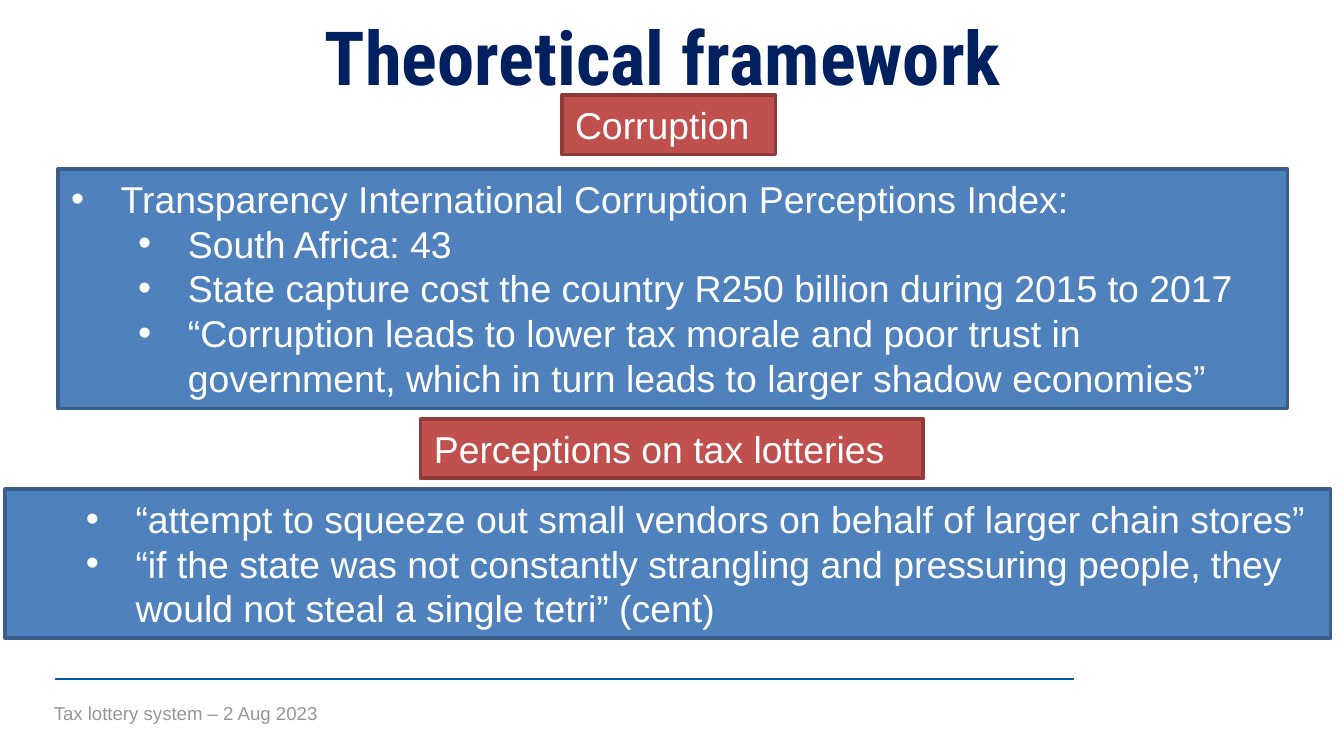
from lxml import etree
from pptx import Presentation
from pptx.dml.color import RGBColor
from pptx.enum.shapes import MSO_CONNECTOR, MSO_SHAPE
from pptx.enum.text import MSO_ANCHOR, MSO_AUTO_SIZE, PP_ALIGN
from pptx.oxml.ns import qn
from pptx.util import Inches, Pt

NAVY = RGBColor(0x00, 0x20, 0x60)
WHITE = RGBColor(0xFF, 0xFF, 0xFF)
GREY = RGBColor(0x96, 0x96, 0x96)
RULE_BLUE = RGBColor(0x00, 0x5B, 0xAA)
BLUE = RGBColor(0x4F, 0x81, 0xBD)
BLUE_EDGE = RGBColor(0x3A, 0x5F, 0x8C)
RED = RGBColor(0xC0, 0x50, 0x4D)
RED_EDGE = RGBColor(0x8E, 0x3B, 0x39)


def place(shape, left, top, width, height):
    shape.left, shape.top = Inches(left), Inches(top)
    shape.width, shape.height = Inches(width), Inches(height)
    frame = shape.text_frame
    frame.word_wrap = True
    frame.auto_size = MSO_AUTO_SIZE.NONE
    return frame


def write(paragraph, text, size, color, font="Arial", level=None, align=PP_ALIGN.LEFT):
    props = paragraph._p.get_or_add_pPr()
    paragraph.alignment = align
    paragraph.space_before = Pt(0)
    if level is None:
        props.set("marL", "0")
        props.set("indent", "0")
        etree.SubElement(props, qn("a:buNone"))
    else:
        paragraph.level = level
        props.set("marL", str(Inches(0.37 + 0.5 * level)))
        props.set("indent", str(Inches(-0.37)))
        etree.SubElement(props, qn("a:buFont")).set("typeface", "Arial")
        etree.SubElement(props, qn("a:buChar")).set("char", "•")
    run = paragraph.add_run()
    run.text = text
    run.font.size = Pt(size)
    run.font.name = font
    run.font.color.rgb = color
    return run


prs = Presentation()
prs.slide_width = Inches(10)
prs.slide_height = prs.slide_width * 9 // 16
slide = prs.slides.add_slide(prs.slide_layouts[1])

footer_rule = slide.shapes.add_connector(
    MSO_CONNECTOR.STRAIGHT, Inches(0.41), Inches(5.05), Inches(7.99), Inches(5.05))
footer_rule.line.color.rgb = RULE_BLUE
footer_rule.line.width = Pt(1)
etree.SubElement(footer_rule._element.spPr, qn("a:effectLst"))

footer = place(slide.placeholders[1], 0.3, 5.17, 7.69, 0.27)
write(footer.paragraphs[0], "Tax lottery system – 2 Aug 2023", 10, GREY)

title = place(slide.shapes.title, -0.14, 0.06, 10.14, 0.72)
title.margin_left = title.margin_right = Inches(0.05)
title.margin_top = title.margin_bottom = Inches(0.02)
title.vertical_anchor = MSO_ANCHOR.TOP
heading = write(title.paragraphs[0], "Theoretical framework", 40, NAVY,
                "Roboto Condensed", align=PP_ALIGN.CENTER)
heading.font.bold = True

panels = [
    ((0.43, 1.26, 9.15, 1.78), BLUE, BLUE_EDGE, [
        (0, "Transparency International Corruption Perceptions Index:"),
        (1, "South Africa: 43"),
        (1, "State capture cost the country R250 billion during 2015 to 2017"),
        (1, "“Corruption leads to lower tax morale and poor trust in government, "
            "which in turn leads to larger shadow economies”"),
    ]),
    ((4.18, 0.71, 1.59, 0.44), RED, RED_EDGE, [(None, "Corruption")]),
    ((3.13, 3.12, 3.74, 0.44), RED, RED_EDGE, [(None, "Perceptions on tax lotteries")]),
    ((0.04, 3.64, 9.86, 1.11), BLUE, BLUE_EDGE, [
        (1, "“attempt to squeeze out small vendors on behalf of larger chain stores”"),
        (1, "“if the state was not constantly strangling and pressuring people, "
            "they would not steal a single tetri” (cent)"),
    ]),
]
for box, fill, edge, points in panels:
    panel = slide.shapes.add_shape(MSO_SHAPE.RECTANGLE, 0, 0, 0, 0)
    panel.shadow.inherit = False
    panel.fill.solid()
    panel.fill.fore_color.rgb = fill
    panel.line.color.rgb = edge
    panel.line.width = Pt(2)
    frame = place(panel, *box)
    frame.vertical_anchor = MSO_ANCHOR.TOP
    for number, (level, text) in enumerate(points):
        paragraph = frame.add_paragraph() if number else frame.paragraphs[0]
        write(paragraph, text, 20, WHITE, level=level)

prs.save("out.pptx")
